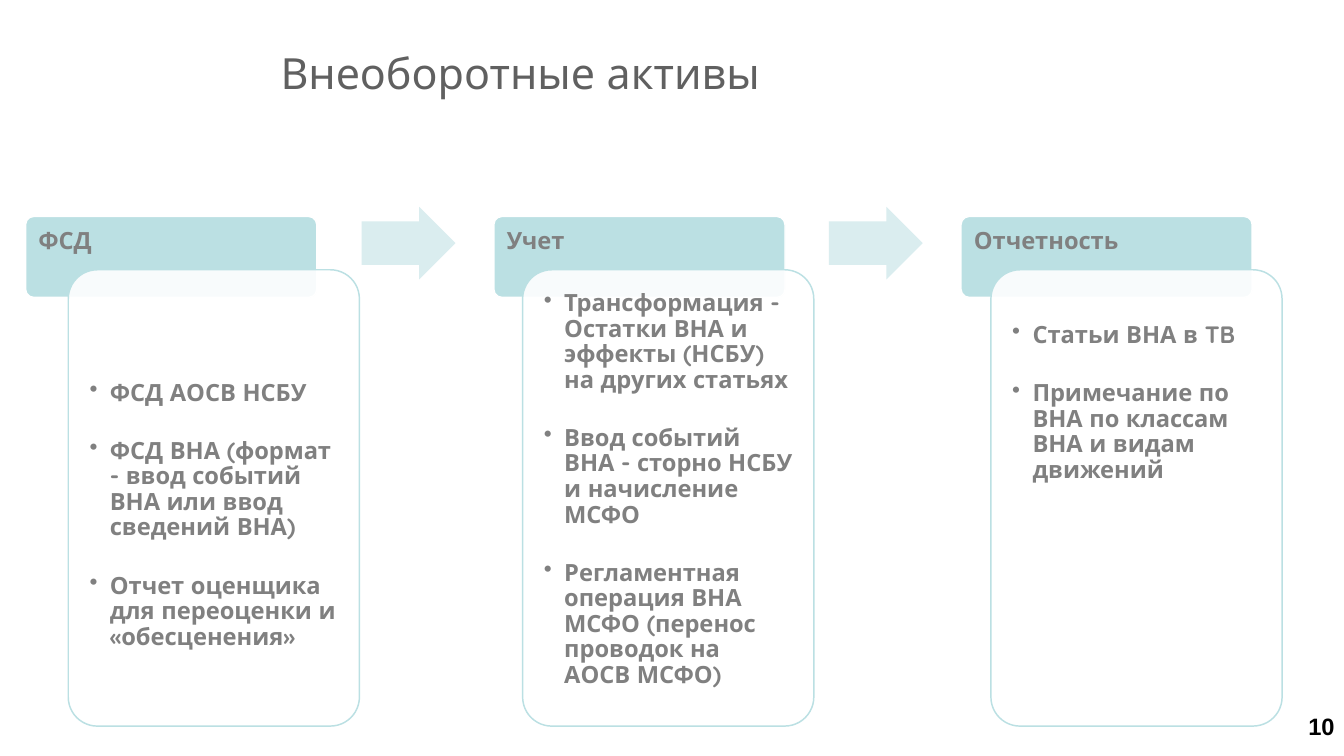
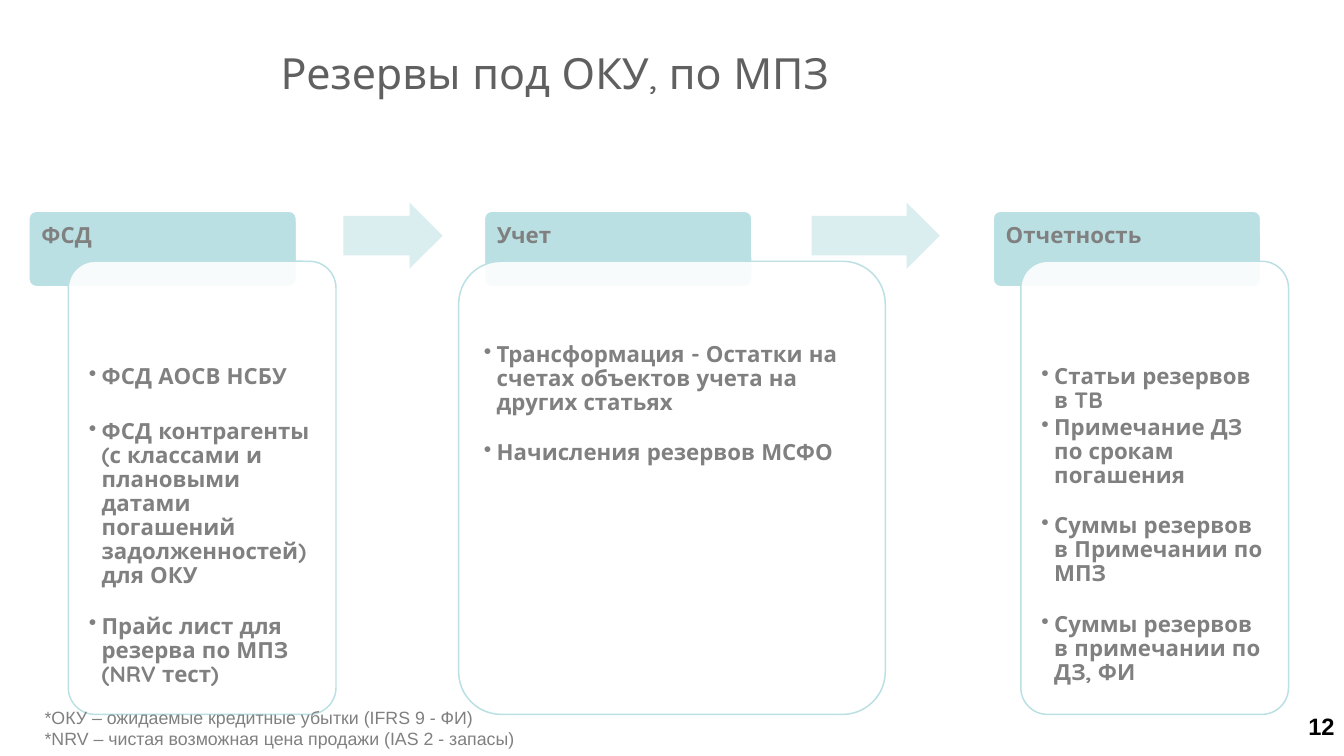
from lxml.etree import SubElement
from pptx import Presentation
from pptx.dml.color import RGBColor
from pptx.enum.shapes import MSO_SHAPE
from pptx.enum.text import MSO_ANCHOR, PP_ALIGN
from pptx.oxml.ns import qn
from pptx.util import Inches, Pt

HUES = {"bar": "BBE0E3", "arrow": "DAEDEF", "white": "FFFFFF",
        "title": "606060", "text": "808080", "page": "000000"}
FACE = "Quicksand"

# Content: each card item is a text, or a text with its own gap above
SLIDES = [
    {
        "title": "Внеоборотные активы", "page": "10",
        "size": 16, "indent": 0.19, "gap": 22,
        "bar": (2.03, 2.73, 0.76), "card": (2.53, 4.28), "arrow": (1.94, 0.68),
        "arrows": [(3.39, 0.88), (7.77, 0.88)],
        "cols": [
            {"head": "ФСД", "bar": 0.24, "card": (0.64, 2.73), "drop": 0.84,
             "items": ["ФСД АОСВ НСБУ",
                       "ФСД ВНА (формат - ввод событий ВНА или ввод сведений ВНА)",
                       "Отчет оценщика для переоценки и «обесценения»"]},
            {"head": "Учет", "bar": 4.63, "card": (4.9, 2.73), "drop": 0,
             "items": ["Трансформация - Остатки ВНА и эффекты (НСБУ) на других статьях",
                       "Ввод событий ВНА - сторно НСБУ и начисление МСФО",
                       "Регламентная операция ВНА МСФО (перенос проводок на АОСВ МСФО)"]},
            {"head": "Отчетность", "bar": 9.01, "card": (9.29, 2.73), "drop": 0.3,
             "items": ["Статьи ВНА в TB",
                       "Примечание по ВНА по классам ВНА и видам движений"]},
        ],
        "notes": [],
    },
    {
        "title": "Резервы под ОКУ, по МПЗ", "page": "12",
        "size": 15, "indent": 0.12, "gap": 18,
        "bar": (1.98, 2.51, 0.71), "card": (2.45, 4.25), "arrow": (1.9, 0.62),
        "arrows": [(3.22, 0.93), (7.61, 1.2)],
        "cols": [
            {"head": "ФСД", "bar": 0.27, "card": (0.64, 2.51), "drop": 0.78,
             "items": ["ФСД АОСВ НСБУ",
                       ("ФСД контрагенты (с классами и плановыми датами погашений "
                        "задолженностей) для ОКУ", 21),
                       "Прайс лист для резерва по МПЗ (NRV тест)"]},
            {"head": "Учет", "bar": 4.54, "card": (4.3, 4), "drop": 0.53,
             "items": ["Трансформация - Остатки на счетах объектов учета на других статьях",
                       "Начисления резервов МСФО"]},
            {"head": "Отчетность", "bar": 9.31, "card": (9.57, 2.51), "drop": 0.78,
             "items": ["Статьи резервов в TB",
                       ("Примечание ДЗ по срокам погашения", 2),
                       "Суммы резервов в Примечании по МПЗ",
                       "Суммы резервов в примечании по ДЗ, ФИ"]},
        ],
        "notes": ["*ОКУ – ожидаемые кредитные убытки (IFRS 9 - ФИ)",
                  "*NRV – чистая возможная цена продажи (IAS 2 - запасы)"],
    },
]


def color(key):
    return RGBColor.from_string(HUES[key])


def write(shape, items, size=16, face=FACE, hue="text", bold=False, gap=0, lead=1.0,
          align=PP_ALIGN.LEFT, anchor=MSO_ANCHOR.TOP, pads=(0.1, 0.05, 0.1, 0.05), indent=0):
    frame = shape.text_frame
    frame.word_wrap = True
    frame.vertical_anchor = anchor
    (frame.margin_left, frame.margin_top,
     frame.margin_right, frame.margin_bottom) = map(Inches, pads)
    for i, item in enumerate(items):
        text, space = item if isinstance(item, tuple) else (item, gap)
        para = frame.paragraphs[0] if i == 0 else frame.add_paragraph()
        para.alignment, para.line_spacing = align, lead
        para.space_before = Pt(space if i else 0)
        if indent:
            props = para._p.get_or_add_pPr()
            props.set("marL", str(Inches(indent)))
            props.set("indent", str(-Inches(indent)))
            SubElement(props, qn("a:buChar")).set("char", "•")
        run = para.add_run()
        run.text = text
        font = run.font
        font.name, font.size, font.bold = face, Pt(size), bold
        font.color.rgb = color(hue)


def draw(slide, kind, box, fill, line=None, adj=(0.1,), alpha=None):
    shape = slide.shapes.add_shape(kind, *map(Inches, box))
    shape.shadow.inherit = False
    for i, value in enumerate(adj):
        shape.adjustments[i] = value
    shape.fill.solid()
    shape.fill.fore_color.rgb = color(fill)
    if alpha:
        tint = shape._element.spPr.find(qn("a:solidFill"))[0]
        SubElement(tint, qn("a:alpha")).set("val", str(alpha * 1000))
    if line:
        shape.line.color.rgb = color(line)
        shape.line.width = Pt(1)
    else:
        shape.line.fill.background()
    return shape


def label(slide, box, items, **style):
    write(slide.shapes.add_textbox(*map(Inches, box)), items, **style)


def build(deck, data):
    slide = deck.slides.add_slide(deck.slide_layouts[5])
    # Title and page number
    title = slide.shapes.title
    title.left, title.top, title.width, title.height = map(Inches, (2.53, 0.12, 7.55, 1.12))
    write(title, [data["title"]], size=29, hue="title", anchor=MSO_ANCHOR.MIDDLE)
    label(slide, (11.6, 6.6, 1.01, 0.39), [data["page"]], face="Arial", hue="page",
          bold=True, lead=1.1, align=PP_ALIGN.RIGHT)
    # Columns: bar with a card over it
    size = data["size"]
    top, wide, high = data["bar"]
    low, tall = data["card"]
    for col in data["cols"]:
        bar = draw(slide, MSO_SHAPE.ROUNDED_RECTANGLE, (col["bar"], top, wide, high),
                   "bar", "white")
        write(bar, [col["head"]], size=size, bold=True, lead=0.9, pads=(0.1, 0.1, 0.1, 0.05))
        left, span = col["card"]
        card = draw(slide, MSO_SHAPE.ROUNDED_RECTANGLE, (left, low, span, tall),
                    "white", "bar", alpha=90)
        write(card, col["items"], size=size, bold=True, lead=0.9, gap=data["gap"],
              indent=data["indent"], pads=(0.12, 0.12 + col["drop"], 0.12, 0))
    # Arrows between columns
    top, high = data["arrow"]
    for left, span in data["arrows"]:
        draw(slide, MSO_SHAPE.RIGHT_ARROW, (left, top, span, high), "arrow", adj=(0.6, 0.5))
    # Footnotes
    if data["notes"]:
        label(slide, (0.32, 6.58, 5, 0.5), data["notes"], size=12, face="Arial")


def main():
    deck = Presentation()
    deck.slide_width, deck.slide_height = Inches(12.6), Inches(7.09)
    for data in SLIDES:
        build(deck, data)
    deck.save("out.pptx")


if __name__ == "__main__":
    main()
